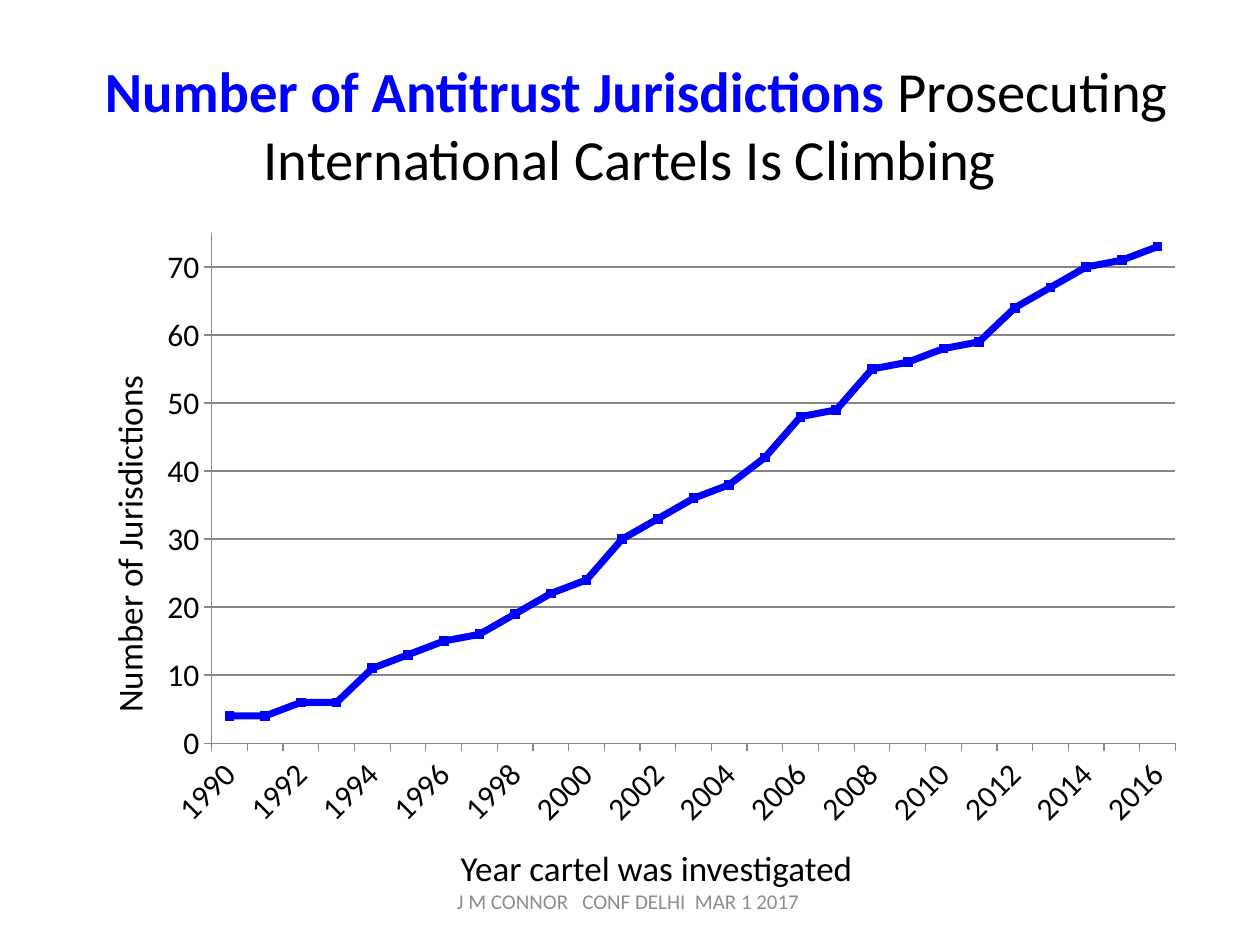
from lxml.etree import SubElement
from pptx import Presentation
from pptx.chart.data import CategoryChartData
from pptx.dml.color import RGBColor
from pptx.enum.chart import XL_CHART_TYPE, XL_MARKER_STYLE, XL_TICK_MARK
from pptx.enum.text import MSO_ANCHOR, PP_ALIGN
from pptx.oxml.ns import qn
from pptx.util import Inches, Pt

SLIDE_COLUMNS, SLIDE_ROWS = 10, 7.5
UNIT = Inches(1)
FONT = "Calibri"
BLUE = RGBColor(0x00, 0x00, 0xFF)
BLACK = RGBColor(0x00, 0x00, 0x00)
FOOTER_GRAY = RGBColor(0x8C, 0x8C, 0x8C)
AXIS_GRAY = RGBColor(0x86, 0x86, 0x86)

CHART_AREA = (1.17, 1.75, 8.33, 4.92)
PLOT_AREA = (1.68, 1.85, 7.65, 4.05)
FIRST_YEAR = 1990
JURISDICTIONS = [4, 4, 6, 6, 11, 13, 15, 16, 19, 22, 24, 30, 33, 36,
                 38, 42, 48, 49, 55, 56, 58, 59, 64, 67, 70, 71, 73]


def frame(area):
    return [round(length * UNIT) for length in area]


def style_font(font, size, color, bold=False):
    font.name = FONT
    font.size = Pt(size)
    font.color.rgb = color
    font.bold = bold


def add_text(slide, area, runs, size, align=PP_ALIGN.CENTER,
             anchor=MSO_ANCHOR.TOP, rotation=0):
    shape = slide.shapes.add_textbox(*frame(area))
    shape.rotation = rotation
    text_frame = shape.text_frame
    text_frame.word_wrap = True
    text_frame.vertical_anchor = anchor
    paragraph = text_frame.paragraphs[0]
    paragraph.alignment = align
    for text, color, bold in runs:
        run = paragraph.add_run()
        run.text = text
        style_font(run.font, size, color, bold)


def style_axis(axis):
    axis.major_tick_mark = XL_TICK_MARK.OUTSIDE
    axis.minor_tick_mark = XL_TICK_MARK.NONE
    axis.format.line.color.rgb = AXIS_GRAY
    style_font(axis.tick_labels.font, 18, BLACK)


def slant_alternate_labels(axis):
    element = axis._element
    element.find(qn("c:txPr")).find(qn("a:bodyPr")).set("rot", "-2700000")
    skip = SubElement(element, qn("c:tickLblSkip"))
    skip.set("val", "2")
    element.find(qn("c:noMultiLvlLbl")).addprevious(skip)


def place_plot(chart, chart_area, plot_area):
    left, top, width, height = chart_area
    plot_left, plot_top, plot_width, plot_height = plot_area
    element = chart._chartSpace.chart.plotArea
    for old_layout in element.findall(qn("c:layout")):
        element.remove(old_layout)
    layout = SubElement(element, qn("c:layout"))
    element.insert(0, layout)
    manual = SubElement(layout, qn("c:manualLayout"))
    settings = {"layoutTarget": "inner", "xMode": "edge", "yMode": "edge",
                "x": (plot_left - left) / width, "y": (plot_top - top) / height,
                "w": plot_width / width, "h": plot_height / height}
    for name, value in settings.items():
        SubElement(manual, qn(f"c:{name}")).set("val", str(value))


def add_line_chart(slide):
    data = CategoryChartData()
    data.categories = [str(FIRST_YEAR + index) for index in range(len(JURISDICTIONS))]
    data.add_series("Series 1", JURISDICTIONS)
    chart = slide.shapes.add_chart(
        XL_CHART_TYPE.LINE_MARKERS, *frame(CHART_AREA), data).chart
    chart.has_legend = False
    chart.has_title = False
    style_font(chart.font, 18, BLACK)
    chart.plots[0].vary_by_categories = False
    place_plot(chart, CHART_AREA, PLOT_AREA)

    style_axis(chart.category_axis)
    slant_alternate_labels(chart.category_axis)
    value_axis = chart.value_axis
    style_axis(value_axis)
    value_axis.minimum_scale = 0
    value_axis.maximum_scale = 75
    value_axis.major_unit = 10
    value_axis.has_major_gridlines = True
    value_axis.major_gridlines.format.line.color.rgb = AXIS_GRAY

    series = chart.plots[0].series[0]
    series.smooth = False
    series.format.line.color.rgb = BLUE
    series.format.line.width = Pt(4)
    marker = series.marker
    marker.style = XL_MARKER_STYLE.SQUARE
    marker.size = 5
    marker.format.fill.solid()
    marker.format.fill.fore_color.rgb = BLUE
    marker.format.line.color.rgb = BLUE


def main():
    presentation = Presentation()
    presentation.slide_width = round(SLIDE_COLUMNS * UNIT)
    presentation.slide_height = round(SLIDE_ROWS * UNIT)
    slide = presentation.slides.add_slide(presentation.slide_layouts[6])
    add_text(slide, (0.5, 0.42, 9, 1.13),
             [(" Number of Antitrust Jurisdictions ", BLUE, True),
              ("Prosecuting International Cartels Is Climbing", BLACK, False)],
             32.4, anchor=MSO_ANCHOR.MIDDLE)
    add_line_chart(slide)
    add_text(slide, (-0.6, 3.91, 3.25, 0.44),
             [("Number of Jurisdictions", BLACK, False)], 20,
             align=PP_ALIGN.LEFT, rotation=270)
    add_text(slide, (3.25, 6.67, 3.92, 0.44),
             [("Year cartel was investigated", BLACK, False)], 20)
    add_text(slide, (3.42, 6.95, 3.17, 0.4),
             [("J M CONNOR   CONF DELHI  MAR 1 2017 ", FOOTER_GRAY, False)], 12,
             anchor=MSO_ANCHOR.MIDDLE)
    presentation.save("out.pptx")


if __name__ == "__main__":
    main()
